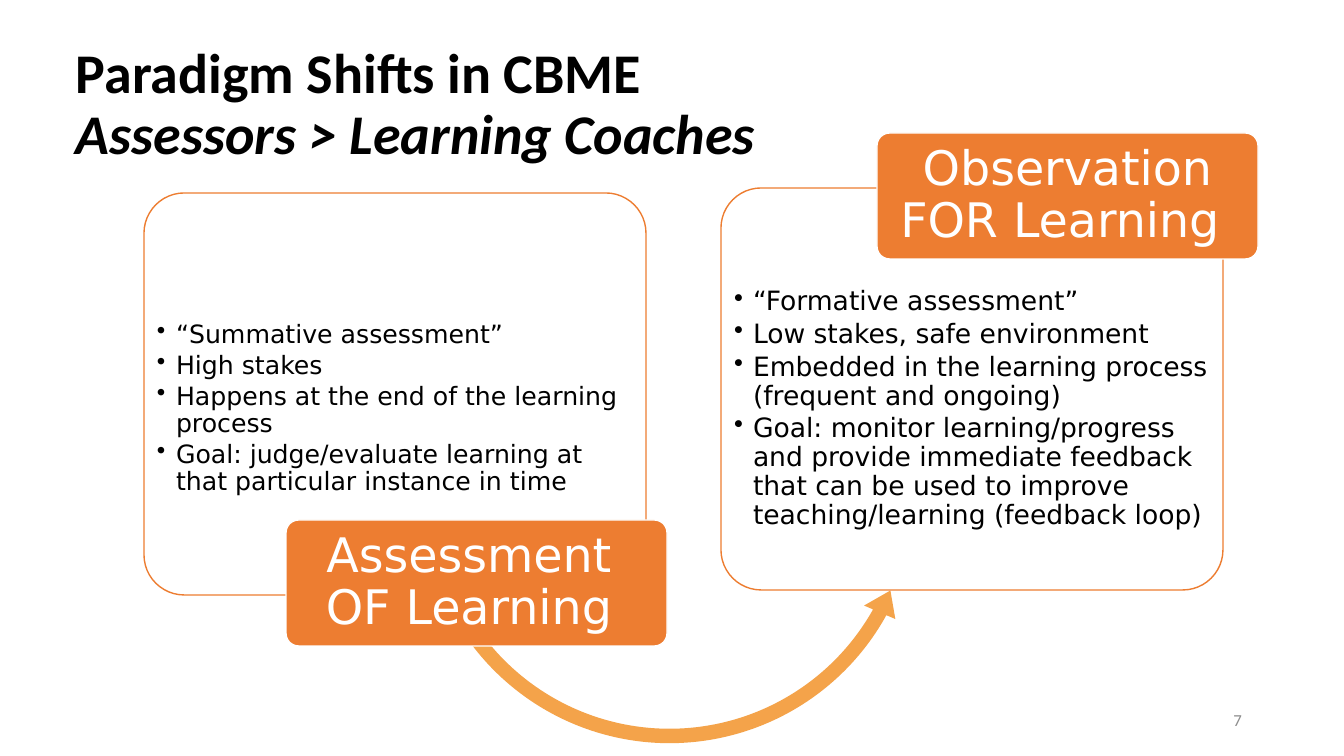
"""Build the slide on the shift from assessors to learning coaches."""
from lxml import etree
from pptx import Presentation
from pptx import util as u
from pptx.dml.color import RGBColor
from pptx.enum import shapes, text
from pptx.oxml.ns import qn

TITLE = "Paradigm Shifts in CBME \vAssessors > Learning Coaches"
NUMBER = "7"
PANELS = [
    dict(label="Assessment \vOF Learning ", size=18, card=(144, 193), body=(153, 203),
         tag=(286, 520), anchor=text.MSO_ANCHOR.BOTTOM,
         points=["“Summative assessment”",
                 "High stakes",
                 "Happens at the end of the learning process",
                 "Goal: judge/evaluate learning at that particular instance in time"]),
    dict(label="Observation FOR Learning ", size=19, card=(721, 188), body=(730, 284),
         tag=(877, 133), anchor=text.MSO_ANCHOR.TOP,
         points=["“Formative assessment”",
                 "Low stakes, safe environment",
                 "Embedded in the learning process (frequent and ongoing)",
                 "Goal: monitor learning/progress and provide immediate feedback that can be "
                 "used to improve teaching/learning (feedback loop)"]),
]
TITLE_BOX = (66, 33, 1159, 146)
NUMBER_BOX = (950, 701, 302, 40)
ARROW_BOX = (412, 238, 515, 515)
ARROW_ADJ = (0.028, 3.475, 17.436, 86.451, 0.033)
CARD, BODY, TAG = (502, 402), (483, 297), (381, 126)
INDENT = 19

BLACK = RGBColor(0, 0, 0)
WHITE = RGBColor(0xFF, 0xFF, 0xFF)
GREY = RGBColor(0x8C, 0x8C, 0x8C)
ORANGE = RGBColor(0xED, 0x7D, 0x31)
AMBER = RGBColor(0xF4, 0xA3, 0x4A)
HEAD_FONT, BODY_FONT = "Calibri", "DejaVu Sans"
SHAPE = shapes.MSO_SHAPE


def px(n):
    return u.Emu(round(n * 914400 / 100.8))


def add_shape(s, kind, box, fill, line=None):
    sp = s.shapes.add_shape(kind, *map(px, box))
    sp.shadow.inherit = False
    sp.fill.solid()
    sp.fill.fore_color.rgb = fill
    if line is None:
        sp.line.fill.background()
    else:
        sp.line.color.rgb = line
        sp.line.width = u.Pt(1)
    return sp


def write(sp, lines, font, size, color, align=text.PP_ALIGN.LEFT,
          anchor=text.MSO_ANCHOR.MIDDLE, margins=(10, 5), after=0):
    tf = sp.text_frame
    tf.word_wrap = True
    tf.vertical_anchor = anchor
    tf.margin_left = tf.margin_right = px(margins[0])
    tf.margin_top = tf.margin_bottom = px(margins[1])
    tf.text = "\n".join(lines)
    for p, line in zip(tf.paragraphs, lines):
        p.text = line
        p.alignment = align
        p.line_spacing = 0.9
        p.space_after = u.Pt(size * after)
        for r in p.runs:
            r.font.name, r.font.size, r.font.color.rgb = font, u.Pt(size), color
    return tf


def add_bullet(p):
    pPr = p._p.get_or_add_pPr()
    pPr.set("marL", str(px(INDENT)))
    pPr.set("indent", str(-px(INDENT)))
    etree.SubElement(pPr, qn("a:buChar")).set("char", "•")


def add_card(s, panel):
    sp = add_shape(s, SHAPE.ROUNDED_RECTANGLE, panel["card"] + CARD, WHITE, ORANGE)
    sp.adjustments[0] = 0.1
    fill = sp._element.spPr.find(qn("a:solidFill"))
    etree.SubElement(fill[0], qn("a:alpha")).set("val", "90000")
    body = s.shapes.add_textbox(*map(px, panel["body"] + BODY))
    tf = write(body, panel["points"], BODY_FONT, panel["size"], BLACK,
               anchor=panel["anchor"], margins=(4, 4), after=0.15)
    for p in tf.paragraphs:
        add_bullet(p)


def add_tag(s, panel):
    sp = add_shape(s, SHAPE.ROUNDED_RECTANGLE, panel["tag"] + TAG, ORANGE, WHITE)
    sp.adjustments[0] = 0.1
    write(sp, [panel["label"]], BODY_FONT, 34, WHITE, text.PP_ALIGN.CENTER, margins=(7, 5))


def add_arrow(s):
    sp = add_shape(s, SHAPE.LEFT_CIRCULAR_ARROW, ARROW_BOX, AMBER)
    for i, value in enumerate(ARROW_ADJ):
        sp.adjustments[i] = value


def main():
    prs = Presentation()
    prs.slide_width, prs.slide_height = px(1344), px(756)
    s = prs.slides.add_slide(prs.slide_layouts[6])

    title = s.shapes.add_textbox(*map(px, TITLE_BOX))
    tf = write(title, [TITLE], HEAD_FONT, 40, BLACK)
    for r in tf.paragraphs[0].runs:
        r.font.bold = True
    r.font.italic = True
    number = s.shapes.add_textbox(*map(px, NUMBER_BOX))
    write(number, [NUMBER], HEAD_FONT, 12, GREY, text.PP_ALIGN.RIGHT)

    before, after = PANELS
    add_card(s, before)
    add_arrow(s)
    add_tag(s, before)
    add_card(s, after)
    add_tag(s, after)
    prs.save("out.pptx")


if __name__ == "__main__":
    main()
